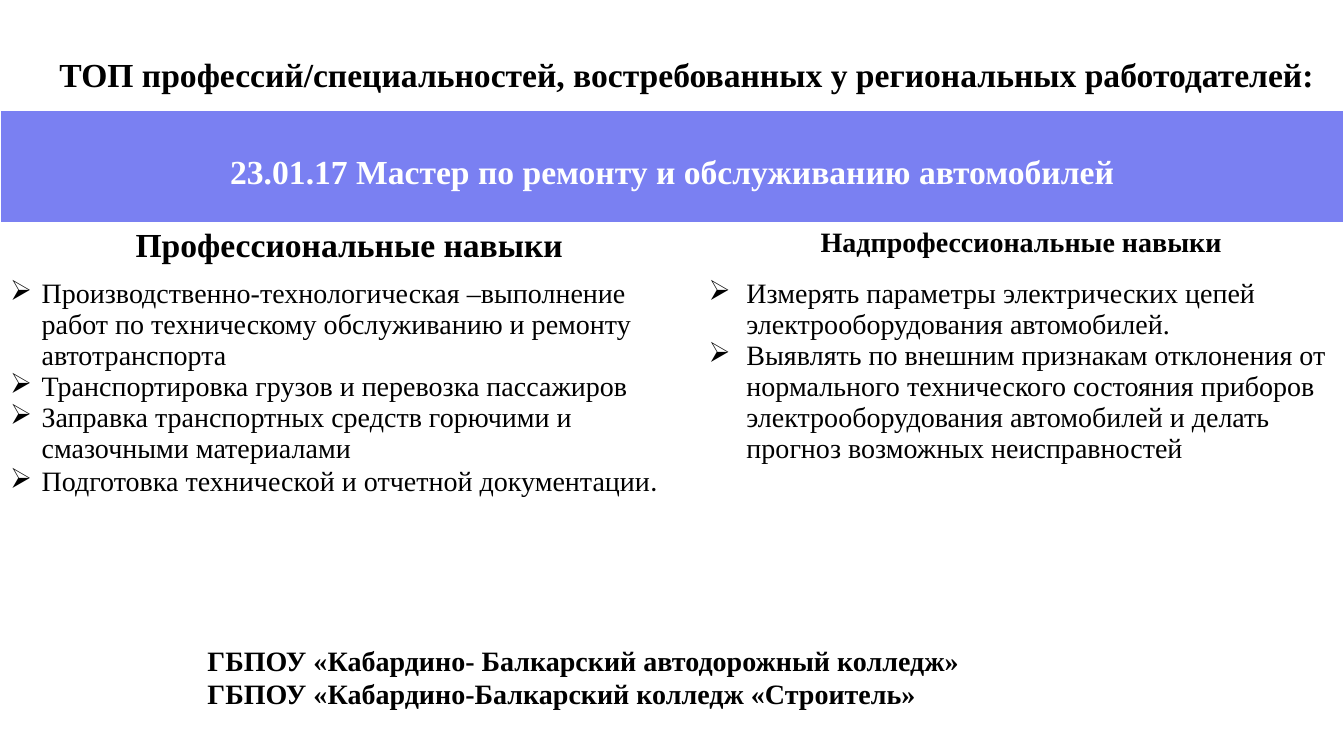
from lxml import etree
from pptx import Presentation
from pptx.dml.color import RGBColor
from pptx.enum.text import MSO_AUTO_SIZE, PP_ALIGN
from pptx.oxml.ns import qn
from pptx.util import Pt

CENTER, LEFT = PP_ALIGN.CENTER, PP_ALIGN.LEFT
GROW = MSO_AUTO_SIZE.SHAPE_TO_FIT_TEXT
SERIF, SANS = "Times New Roman", "Calibri"
BLACK, WHITE, VIOLET = "000000", "FFFFFF", "7A80F2"

TEXTS = [
    ((35.3, 35.3, 944.6, 36), 24,
     ["ТОП профессий/специальностей, востребованных у региональных работодателей:"]),
    ((141.1, 455.8, 591, 55.4), 20,
     ["ГБПОУ «Кабардино- Балкарский автодорожный колледж»",
      "ГБПОУ «Кабардино-Балкарский колледж «Строитель»"]),
]
PROFESSION = "23.01.17 Мастер по ремонту и обслуживанию автомобилей"
COLUMNS = [
    {"width": 499, "head": "Профессиональные навыки", "size": 24, "indent": 22.5, "skills": [
        "Производственно-технологическая –выполнение работ по техническому обслуживанию и ремонту автотранспорта",
        "Транспортировка грузов и перевозка пассажиров",
        "Заправка транспортных средств горючими и смазочными материалами",
        "Подготовка технической и отчетной документации"], "end": "."},
    {"width": 461, "head": "Надпрофессиональные навыки", "size": 20, "indent": 27, "skills": [
        "Измерять параметры электрических цепей электрооборудования автомобилей.",
        "Выявлять по внешним признакам отклонения от нормального технического состояния приборов "
        "электрооборудования автомобилей и делать прогноз возможных неисправностей"], "end": ""},
]
ROWS = [80, 31, 109]


def rgb(value):
    return RGBColor.from_string(value)


def add_run(p, text, size, bold=True, color=BLACK, name=SERIF):
    r = p.add_run()
    r.text = text
    for key, value in {"size": Pt(size), "bold": bold, "name": name}.items():
        setattr(r.font, key, value)
    r.font.color.rgb = rgb(color)


def write(tf, lines, size, align=LEFT, indent=0, **style):
    for i, line in enumerate(lines):
        p = tf.add_paragraph() if i else tf.paragraphs[0]
        p.alignment = align
        if indent:
            pPr = p._p.get_or_add_pPr()
            pPr.set("marL", str(Pt(indent)))
            pPr.set("indent", str(-Pt(indent)))
            etree.SubElement(pPr, qn("a:buChar"), char="➢")
        add_run(p, line, size, **style)
    return p


def add_borders(cell, color, width):
    tcPr = cell._tc.get_or_add_tcPr()
    for i, side in enumerate(("lnL", "lnR", "lnT")):
        ln = etree.Element(qn("a:" + side), w=str(Pt(width)))
        fill = etree.SubElement(ln, qn("a:solidFill"))
        etree.SubElement(fill, qn("a:srgbClr"), val=color)
        tcPr.insert(i, ln)


prs = Presentation()
prs.slide_width, prs.slide_height = Pt(960), Pt(540)
s = prs.slides.add_slide(prs.slide_layouts[6])

for box, size, lines in TEXTS:
    tf = s.shapes.add_textbox(*map(Pt, box)).text_frame
    tf.word_wrap, tf.auto_size = True, GROW
    write(tf, lines, size)

table = s.shapes.add_table(len(ROWS), len(COLUMNS), 0, Pt(79.2), Pt(960), Pt(sum(ROWS))).table
table.first_row = table.horz_banding = False
for row, height in zip(table.rows, ROWS):
    row.height = Pt(height)
    for cell in row.cells:
        cell.fill.background()

band = table.cell(0, 0)
band.merge(table.cell(0, 1))
band.fill.solid()
band.fill.fore_color.rgb = rgb(VIOLET)
band.margin_top = Pt(31.2)
add_borders(band, WHITE, 1)
write(band.text_frame, [PROFESSION], 24, CENTER, color=WHITE)

for i, col in enumerate(COLUMNS):
    table.columns[i].width = Pt(col["width"])
    write(table.cell(1, i).text_frame, [col["head"]], col["size"], CENTER)
    p = write(table.cell(2, i).text_frame, col["skills"], 20, indent=col["indent"], bold=False)
    if col["end"]:
        add_run(p, col["end"], 20, bold=False, name=SANS)

prs.save("out.pptx")
